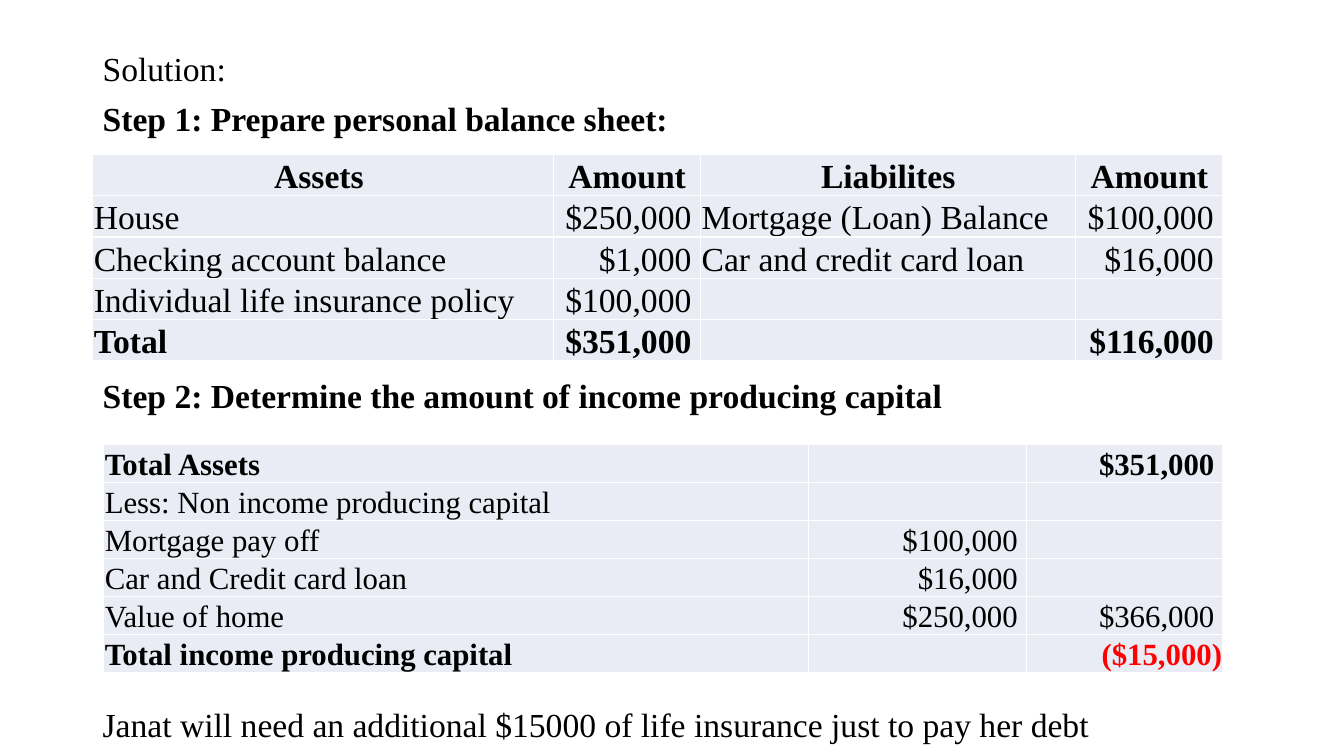
from lxml import etree
from pptx import Presentation
from pptx.dml.color import RGBColor
from pptx.enum.text import MSO_ANCHOR, PP_ALIGN
from pptx.oxml.ns import qn
from pptx.util import Emu, Pt

LEFT, MID, RIGHT = PP_ALIGN.LEFT, PP_ALIGN.CENTER, PP_ALIGN.RIGHT
TOP, BOTTOM = MSO_ANCHOR.TOP, MSO_ANCHOR.BOTTOM
PX = 9144  # EMU per px, 100 px to the inch
FONT = "Times New Roman"
COLORS = {"ink": "000000", "loss": "FF0000", "cell": "E9EBF5", "rule": "FFFFFF"}


def px(n):
    return Emu(n * PX)


def write(para, text, size=24, bold=False, color="ink", align=LEFT,
          before=0, line=None):
    """Put one formatted run into a paragraph."""
    para.alignment = align
    para.space_before = Pt(before)
    if line:
        para.line_spacing = line
    run = para.add_run()
    run.text = text
    run.font.name = FONT
    run.font.size = Pt(size)
    run.font.bold = bold
    run.font.color.rgb = RGBColor.from_string(COLORS[color])


class Deck:
    def __init__(self, wide, high):
        self.show = Presentation()
        self.show.slide_width, self.show.slide_height = px(wide), px(high)
        self.slide = self.show.slides.add_slide(self.show.slide_layouts[6])

    def text(self, x, y, w, h, lines):
        """Add a text box; lines hold (text, bold, space before)."""
        frame = self.slide.shapes.add_textbox(px(x), px(y), px(w), px(h)).text_frame
        frame.word_wrap = True
        frame.vertical_anchor = TOP
        for i, (text, bold, before) in enumerate(lines):
            para = frame.add_paragraph() if i else frame.paragraphs[0]
            write(para, text, bold=bold, before=before, line=0.9)

    def table(self, x, y, cols, high, rows, size, head=False):
        """Add a table whose first and last rows are bold."""
        grid = self.slide.shapes.add_table(
            len(rows), len(cols), px(x), px(y), px(sum(cols)), px(high * len(rows))).table
        grid.first_row = grid.horz_banding = False
        for col, wide in zip(grid.columns, cols):
            col.width = px(wide)
        for r, row in enumerate(rows):
            grid.rows[r].height = px(high)
            for c, text in enumerate(row):
                cell = grid.cell(r, c)
                self.style(cell)
                if not text:
                    continue
                money = text.startswith(("$", "("))
                align = MID if head and r == 0 else RIGHT if money else LEFT
                write(cell.text_frame.paragraphs[0], text, size=size, align=align,
                      bold=r in (0, len(rows) - 1),
                      color="loss" if text.startswith("(") else "ink")

    def style(self, cell):
        """Set the borders, fill, margins and anchor of a cell."""
        cell.margin_left = cell.margin_right = cell.margin_top = px(1)
        cell.margin_bottom = 0
        cell.vertical_anchor = BOTTOM
        props = cell._tc.get_or_add_tcPr()
        for side in ("a:lnL", "a:lnR", "a:lnT", "a:lnB"):
            edge = etree.SubElement(props, qn(side), w=str(Pt(1)))
            fill = etree.SubElement(edge, qn("a:solidFill"))
            etree.SubElement(fill, qn("a:srgbClr"), val=COLORS["rule"])
        cell.fill.solid()
        cell.fill.fore_color.rgb = RGBColor.from_string(COLORS["cell"])

    def save(self):
        self.show.save("out.pptx")


def main():
    deck = Deck(1333, 750)

    # Headings and conclusion, spaced to leave room for the tables
    deck.text(92, 47, 1150, 724, [
        ("Solution:", False, 0),
        ("Step 1: Prepare personal balance sheet:", True, 10),
        ("Step 2: Determine the amount of income producing capital", True, 172),
        ("Janat will need an additional $15000 of life insurance just to pay her debt",
         False, 209),
    ])

    # Balance sheet
    deck.table(92, 153, [457, 146, 372, 146], 38, [
        ("Assets ", "Amount", "Liabilites", "Amount"),
        ("House", "$250,000 ", "Mortgage (Loan) Balance", "$100,000 "),
        ("Checking account balance", "$1,000 ", "Car and credit card loan", "$16,000 "),
        ("Individual life insurance policy", "$100,000 ", "", ""),
        ("Total", "$351,000 ", "", "$116,000 "),
    ], 24, head=True)

    # Income producing capital
    deck.table(103, 441, [699, 216, 195], 35, [
        ("Total Assets", "", "$351,000 "),
        ("Less: Non income producing capital", "", ""),
        ("Mortgage pay off", "$100,000 ", ""),
        ("Car and Credit card loan", "$16,000 ", ""),
        ("Value of home", "$250,000 ", "$366,000 "),
        ("Total income producing capital", "", "($15,000)"),
    ], 22)

    deck.save()


if __name__ == "__main__":
    main()
